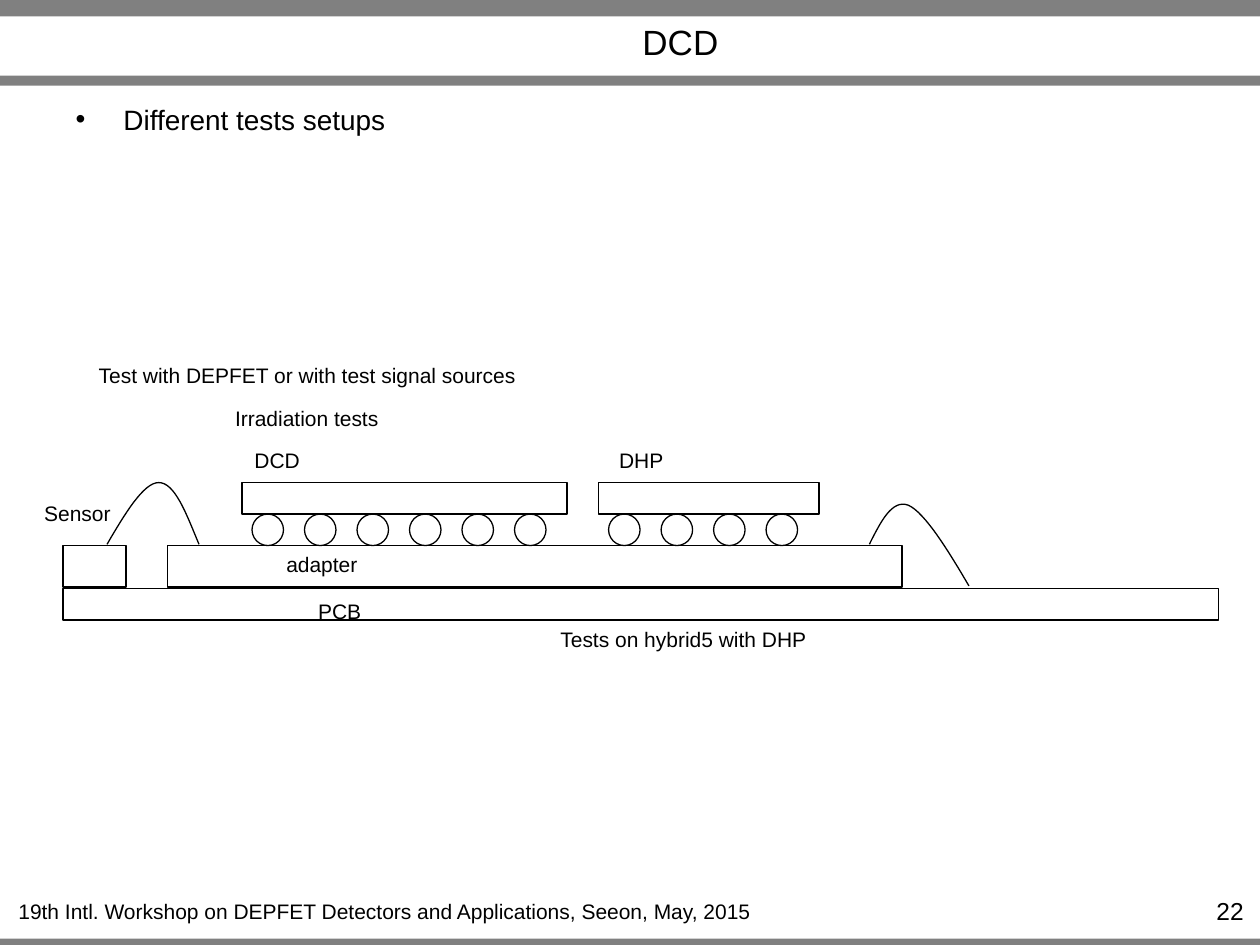
from lxml import etree
from pptx import Presentation
from pptx.dml.color import RGBColor
from pptx.enum.shapes import MSO_SHAPE
from pptx.enum.text import MSO_ANCHOR, MSO_AUTO_SIZE, PP_ALIGN
from pptx.oxml.ns import qn
from pptx.util import Inches, Pt


def write(shape, text, size=12, color="000000", align=PP_ALIGN.CENTER,
          anchor=MSO_ANCHOR.TOP, wrap=False):
    frame = shape.text_frame
    frame.auto_size = MSO_AUTO_SIZE.NONE
    frame.word_wrap = wrap
    frame.vertical_anchor = anchor
    paragraph = frame.paragraphs[0]
    paragraph.alignment = align
    run = paragraph.add_run()
    run.text = text
    run.font.name = "Arial"
    run.font.size = Pt(size)
    run.font.color.rgb = RGBColor.from_string(color)
    return paragraph


def paint(shape, fill=None, line=None):
    shape.shadow.inherit = False
    if fill:
        shape.fill.solid()
        shape.fill.fore_color.rgb = RGBColor.from_string(fill)
    else:
        shape.fill.background()
    if line:
        shape.line.color.rgb = RGBColor.from_string(line)
        shape.line.width = Pt(0.75)
    else:
        shape.line.fill.background()


prs = Presentation()
prs.slide_width, prs.slide_height = Inches(10), Inches(7.5)
slide = prs.slides.add_slide(prs.slide_layouts[1])
shapes = slide.shapes

# Frame of the page
for top, height in [(7.45, 0.05), (0, 0.13), (0.6, 0.08)]:
    bar = shapes.add_shape(MSO_SHAPE.RECTANGLE, 0, Inches(top), Inches(10), Inches(height))
    paint(bar, fill="808080")

title = shapes.title
title.left, title.top = Inches(1.3), Inches(0.14)
title.width, title.height = Inches(8.2), Inches(0.38)
write(title, "DCD", size=20, anchor=MSO_ANCHOR.MIDDLE, wrap=True)

body = slide.placeholders[1]
body.left, body.top = Inches(0.5), Inches(0.76)
body.width, body.height = Inches(9), Inches(1.49)
topic = write(body, "Different tests setups", size=16, align=PP_ALIGN.LEFT, wrap=True)
topic.space_before = Pt(0)
topic_format = topic._p.get_or_add_pPr()
topic_format.set("marL", str(Inches(0.38)))
topic_format.set("indent", str(Inches(-0.38)))
etree.SubElement(topic_format, qn("a:buChar")).set("char", "•")

page_number = shapes.add_textbox(Inches(9.1), Inches(7.06), Inches(0.87), Inches(0.24))
write(page_number, "22", size=14, align=PP_ALIGN.RIGHT, wrap=True)

# Chips on their bump bonds
bump_size, bump_pitch = 0.25, 5 / 12
for chip_left, chip_width, bump_count in [(1.92, 2.58, 6), (4.75, 1.75, 4)]:
    chip_group = shapes.add_group_shape().shapes
    chip = chip_group.add_shape(MSO_SHAPE.RECTANGLE, Inches(chip_left), Inches(3.83),
                                Inches(chip_width), Inches(0.25))
    paint(chip, line="000000")
    for i in range(bump_count):
        bump = chip_group.add_shape(
            MSO_SHAPE.OVAL, Inches(chip_left + 0.08 + i * bump_pitch), Inches(4.08),
            Inches(bump_size), Inches(bump_size))
        paint(bump, line="000000")

# Adapter, PCB and sensor
for left, top, width, height in [(1.33, 4.33, 5.83, 0.33), (0.5, 4.67, 9.17, 0.25),
                                 (0.5, 4.33, 0.5, 0.33)]:
    board = shapes.add_shape(MSO_SHAPE.RECTANGLE, Inches(left), Inches(top),
                             Inches(width), Inches(height))
    paint(board, line="000000")

# Bond wires: two cubic Bézier curves each, sampled finely
bond_wires = [
    [(6.9, 4.32), (6.99, 4.14), (7.08, 3.96), (7.21, 4.01),
     (7.34, 4.07), (7.52, 4.36), (7.69, 4.65)],
    [(1.58, 4.32), (1.48, 4.08), (1.39, 3.83), (1.26, 3.83),
     (1.14, 3.83), (0.99, 4.08), (0.85, 4.32)],
]
steps = 16
for controls in bond_wires:
    points = []
    for first in (0, 3):
        for step in range(1, steps + 1):
            t = step / steps
            weights = ((1 - t) ** 3, 3 * t * (1 - t) ** 2, 3 * t ** 2 * (1 - t), t ** 3)
            curve = controls[first:first + 4]
            points.append(tuple(
                Inches(sum(w * point[axis] for w, point in zip(weights, curve)))
                for axis in (0, 1)))
    start_x, start_y = controls[0]
    builder = shapes.build_freeform(Inches(start_x), Inches(start_y))
    builder.add_line_segments(points, close=False)
    paint(builder.convert_to_shape(), line="000000")

# Labels and footer
for text, left, top, width in [
    ("19th Intl. Workshop on DEPFET Detectors and Applications, Seeon, May, 2015",
     0.02, 7.08, 6.07),
    ("DCD", 1.92, 3.5, 0.56),
    ("DHP", 4.81, 3.5, 0.56),
    ("Sensor", 0.25, 3.92, 0.73),
    ("Tests on hybrid5 with DHP", 4.34, 4.92, 2.17),
    ("Test with DEPFET or with test signal sources", 0.67, 2.83, 3.54),
    ("Irradiation tests", 1.76, 3.17, 1.35),
    ("adapter", 2.17, 4.33, 0.77),
    ("PCB", 2.42, 4.7, 0.55),
]:
    label = shapes.add_textbox(Inches(left), Inches(top), Inches(width), Inches(0.3))
    write(label, text)

prs.save("out.pptx")
